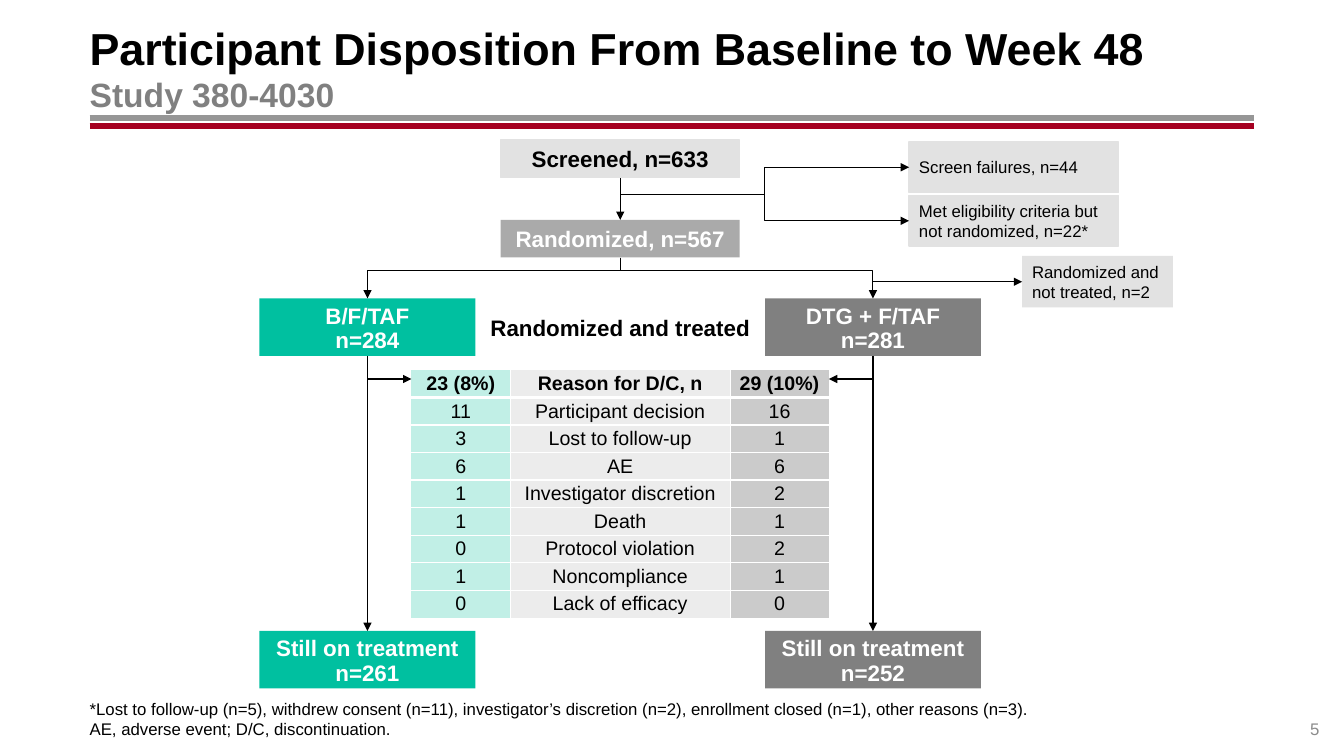
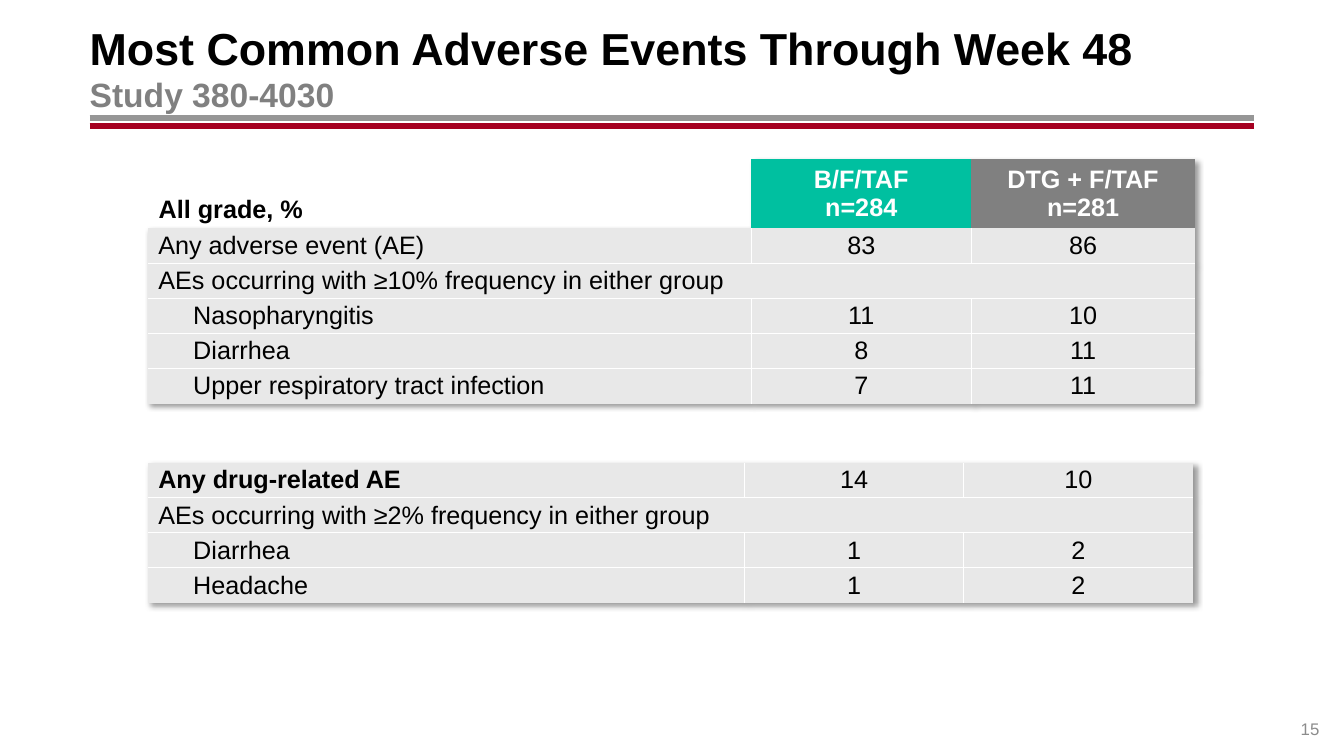
from dataclasses import dataclass

from lxml import etree
from pptx import Presentation
from pptx.dml.color import RGBColor
from pptx.enum.shapes import MSO_CONNECTOR, MSO_SHAPE
from pptx.enum.text import MSO_ANCHOR, PP_ALIGN
from pptx.oxml.ns import qn
from pptx.util import Cm, Pt

LEFT, CENTER, RIGHT = PP_ALIGN.LEFT, PP_ALIGN.CENTER, PP_ALIGN.RIGHT
TOP, MIDDLE, BOTTOM = MSO_ANCHOR.TOP, MSO_ANCHOR.MIDDLE, MSO_ANCHOR.BOTTOM
STRAIGHT, ELBOW = MSO_CONNECTOR.STRAIGHT, MSO_CONNECTOR.ELBOW
RECTANGLE = MSO_SHAPE.RECTANGLE
SIDE_TOP, SIDE_LEFT, SIDE_BOTTOM = 0, 1, 2
PLAIN_TABLE = "{2D5ABB26-0587-4C30-8999-92F81FD0307C}"


@dataclass(frozen=True)
class TextStyle:
    size: float
    color: str = "000000"
    bold: bool = False


@dataclass(frozen=True)
class Theme:
    font: str = "Arial"
    black: str = "000000"
    white: str = "FFFFFF"
    rule_grey: str = "969696"
    rule_red: str = "A50021"
    teal: str = "00C0A0"
    teal_tint: str = "C1EFE6"
    grey: str = "808080"
    grey_tint: str = "CBCBCB"
    mid_grey: str = "AAAAAA"
    light_grey: str = "E2E2E2"
    reason_grey: str = "ECECEC"
    row_grey: str = "E8E8E8"
    title: TextStyle = TextStyle(32, bold=True)
    subtitle: TextStyle = TextStyle(24, "808080", True)
    page_number: TextStyle = TextStyle(12, "8C8C8C")
    note: TextStyle = TextStyle(12)
    flow: TextStyle = TextStyle(16, bold=True)
    flow_white: TextStyle = TextStyle(16, "FFFFFF", True)
    reason: TextStyle = TextStyle(14)
    reason_head: TextStyle = TextStyle(14, bold=True)
    event: TextStyle = TextStyle(18)
    event_bold: TextStyle = TextStyle(18, bold=True)
    event_head: TextStyle = TextStyle(18, "FFFFFF", True)


THEME = Theme()
MARGIN, CONTENT_WIDTH = 2.26, 29.34
STUDY = "Study 380-4030"
ARMS = (
    ("B/F/TAF", "n=284", THEME.teal),
    ("DTG + F/TAF", "n=281", THEME.grey),
)


def apply(target, values):
    for name, value in values.items():
        setattr(target, name, value)


def rgb(color):
    return RGBColor.from_string(color)


def insets(left, top, right, bottom):
    return {"margin_left": Cm(left), "margin_top": Cm(top),
            "margin_right": Cm(right), "margin_bottom": Cm(bottom)}


NO_INSETS = insets(0, 0, 0, 0)


def write(frame, lines, align=LEFT, spacing=None):
    """Fill a text frame with one paragraph for each (text, style) pair."""
    for index, (text, style) in enumerate(lines):
        para = frame.paragraphs[0] if index == 0 else frame.add_paragraph()
        apply(para, {"alignment": align, "line_spacing": spacing})
        span = para.add_run()
        span.text = text
        apply(span.font, {"name": THEME.font, "size": Pt(style.size), "bold": style.bold})
        span.font.color.rgb = rgb(style.color)


def add_text(page, place, lines, align=LEFT, anchor=MIDDLE, margins=NO_INSETS):
    frame = page.shapes.add_textbox(*map(Cm, place)).text_frame
    apply(frame, {"word_wrap": True, "vertical_anchor": anchor, **margins})
    write(frame, lines, align)


def add_box(page, place, fill, lines, align=CENTER, outlined=False,
            spacing=None, margins=insets(0.25, 0.13, 0.25, 0.13)):
    box = page.shapes.add_shape(RECTANGLE, *map(Cm, place))
    box.shadow.inherit = False
    box.fill.solid()
    box.fill.fore_color.rgb = rgb(fill)
    if outlined:
        box.line.color.rgb = rgb(fill)
        box.line.width = Pt(1)
    else:
        box.line.fill.background()
    apply(box.text_frame, {"word_wrap": True, "vertical_anchor": MIDDLE, **margins})
    write(box.text_frame, lines, align, spacing)
    return box


def add_line(page, start, end, kind=STRAIGHT, color=THEME.black, width=0.75, arrow=True):
    line = page.shapes.add_connector(kind, *map(Cm, (*start, *end)))
    line.line.color.rgb = rgb(color)
    line.line.width = Pt(width)
    properties = line.element.spPr
    if arrow:
        etree.SubElement(properties.find(qn("a:ln")), qn("a:tailEnd"), type="triangle")
    etree.SubElement(properties, qn("a:effectLst"))
    return line


def join_down(page, upper, lower):
    """Draw an arrow from the bottom of one box to the top of another."""
    line = add_line(page, (0, 0), (0, 0))
    line.begin_connect(upper, SIDE_BOTTOM)
    line.end_connect(lower, SIDE_TOP)


def add_drop_elbow(page, start, end, bend):
    """Draw an elbow arrow that leaves downwards and turns at the bend fraction."""
    (x1, y1), (x2, y2) = start, end
    drop, reach = y2 - y1, abs(x2 - x1)
    left, top = (x1 + x2 - drop) / 2, (y1 + y2 - reach) / 2
    line = add_line(page, (left, top), (left + drop, top + reach), ELBOW)
    properties = line.element.spPr
    turn = {"rot": "5400000"} if x2 < x1 else {"rot": "16200000", "flipH": "1"}
    for name, value in turn.items():
        properties.find(qn("a:xfrm")).set(name, value)
    geometry = properties.find(qn("a:prstGeom"))
    guides = geometry.find(qn("a:avLst"))
    if guides is None:
        guides = etree.SubElement(geometry, qn("a:avLst"))
    etree.SubElement(guides, qn("a:gd"), name="adj1", fmla=f"val {round(bend * 100000)}")


def add_grid(page, left, top, columns, rows):
    """Add an unstyled table with the given column widths and row heights."""
    place = map(Cm, (left, top, sum(columns), sum(rows)))
    table = page.shapes.add_table(len(rows), len(columns), *place).table
    apply(table, {"first_row": False, "horz_banding": False})
    table._tbl.tblPr.find(qn("a:tableStyleId")).text = PLAIN_TABLE
    for column, width in zip(table.columns, columns):
        column.width = Cm(width)
    for row, height in zip(table.rows, rows):
        row.height = Cm(height)
    return table


def fill_cell(cell, lines, fill, borders, margins, align=CENTER, anchor=MIDDLE):
    """Set a cell; borders maps sides, in the order L, R, T, B, to point widths."""
    properties = cell._tc.get_or_add_tcPr()
    for side, width in borders.items():
        edge = etree.SubElement(properties, qn(f"a:ln{side}"), w=str(Pt(width)))
        paint = etree.SubElement(edge, qn("a:solidFill"))
        etree.SubElement(paint, qn("a:srgbClr"), val=THEME.white)
    if fill:
        cell.fill.solid()
        cell.fill.fore_color.rgb = rgb(fill)
    else:
        cell.fill.background()
    apply(cell, {"vertical_anchor": anchor, **margins})
    write(cell.text_frame, lines, align)


def inner_borders(column, last_column, above, below, width):
    """Give the sides that touch a neighbour; above and below are 0 at an edge."""
    sides = {"L": width * (column > 0), "R": width * (column < last_column),
             "T": above, "B": below}
    return {side: size for side, size in sides.items() if size}


def add_table_shadow(table):
    effects = etree.Element(qn("a:effectLst"))
    shadow = etree.SubElement(effects, qn("a:outerShdw"), blurRad="50800", dist="38100",
                              dir="2700000", algn="tl", rotWithShape="0")
    color = etree.SubElement(shadow, qn("a:srgbClr"), val=THEME.black)
    etree.SubElement(color, qn("a:alpha"), val="40000")
    table._tbl.tblPr.insert(0, effects)


def add_page(deck, title, number):
    page = deck.slides.add_slide(deck.slide_layouts[6])
    for y, color in ((2.97, THEME.rule_grey), (3.18, THEME.rule_red)):
        add_line(page, (MARGIN, y), (MARGIN + CONTENT_WIDTH, y),
                 color=color, width=4.25, arrow=False)
    add_text(page, (MARGIN, 0.46, CONTENT_WIDTH, 2.3),
             [(title, THEME.title), (STUDY, THEME.subtitle)],
             anchor=TOP, margins=insets(0, 0.05, 0.25, 0))
    add_text(page, (31.6, 17.6, 1.65, 1.02), [(number, THEME.page_number)], RIGHT, BOTTOM)
    return page


def add_reason_table(page, left, top):
    reasons = (
        ("23 (8%)", "Reason for D/C, n", "29 (10%)"),
        ("11", "Participant decision", "16"),
        ("3", "Lost to follow-up", "1"),
        ("6", "AE", "6"),
        ("1", "Investigator discretion", "2"),
        ("1", "Death", "1"),
        ("0", "Protocol violation", "2"),
        ("1", "Noncompliance", "1"),
        ("0", "Lack of efficacy", "0"),
    )
    fills = (THEME.teal_tint, THEME.reason_grey, THEME.grey_tint)
    edges = [0, 3] + [1] * (len(reasons) - 2) + [0]
    table = add_grid(page, left, top, (2.49, 5.54, 2.49), [6.25 / len(reasons)] * len(reasons))
    for r, row in enumerate(reasons):
        style = THEME.reason if r else THEME.reason_head
        for c, (text, fill) in enumerate(zip(row, fills)):
            borders = inner_borders(c, 2, edges[r], edges[r + 1], 1)
            fill_cell(table.cell(r, c), [(text, style)], fill, borders,
                      insets(0, 0.05, 0, 0.05))


def add_disposition(deck):
    page = add_page(deck, "Participant Disposition From Baseline to Week 48", "5")
    center, reach = 15.63, 6.37
    arm_width, arm_height, arm_top = 5.44, 1.45, 7.52
    flow_width, flow_height, random_top = 6.02, 0.95, 5.54

    flow_left = center - flow_width / 2
    screened = add_box(page, (flow_left, 3.53, flow_width, flow_height), THEME.light_grey,
                       [("Screened, n=633", THEME.flow)], outlined=True)
    randomized = add_box(page, (flow_left, random_top, flow_width, flow_height),
                         THEME.mid_grey, [("Randomized, n=567", THEME.flow_white)])
    join_down(page, screened, randomized)

    side_left, side_top, side_height, side_step = 22.91, 3.58, 1.27, 1.35
    branch_y = side_top + (side_height + side_step) / 2
    excluded = ("Screen failures, n=44", "Met eligibility criteria but not randomized, n=22*")
    for index, text in enumerate(excluded):
        y = side_top + index * side_step
        add_box(page, (side_left, y, 5.28, side_height), THEME.light_grey,
                [(text, THEME.note)], LEFT, outlined=True)
        add_line(page, (center, branch_y), (side_left, y + side_height / 2), ELBOW)

    untreated = add_box(page, (25.76, 6.45, 3.8, 1.3), THEME.light_grey,
                        [("Randomized and not treated, n=2", THEME.note)], LEFT)
    add_line(page, (center + reach, 7.1), (25.76, 7.1)).end_connect(untreated, SIDE_LEFT)

    table_left, table_right, exit_y = 10.37, 20.89, 9.55
    add_reason_table(page, table_left, 9.32)
    paths = ((center - reach, table_left, "n=261"), (center + reach, table_right, "n=252"))
    for (name, size, fill), (x, table_edge, remaining) in zip(ARMS, paths):
        start, finish = (
            add_box(page, (x - arm_width / 2, y, arm_width, arm_height), fill,
                    [(text, THEME.flow_white) for text in lines],
                    spacing=0.9, margins=insets(0.25, 0.1, 0.25, 0))
            for y, lines in ((arm_top, (name, size)),
                             (15.9, ("Still on treatment", remaining))))
        add_drop_elbow(page, (center, random_top + flow_height), (x, arm_top), 0.32)
        join_down(page, start, finish)
        add_line(page, (x, exit_y), (table_edge, exit_y))

    add_text(page, (center - 3.62, 7.7, 7.24, 1.09),
             [("Randomized and treated", THEME.flow)], CENTER)
    notes = (
        "*Lost to follow-up (n=5), withdrew consent (n=11), investigator’s discretion (n=2), "
        "enrollment closed (n=1), other reasons (n=3).",
        "AE, adverse event; D/C, discontinuation.",
    )
    add_text(page, (MARGIN, 17.35, CONTENT_WIDTH, 1.27),
             [(text, THEME.note) for text in notes], anchor=BOTTOM)


def add_event_table(page, top, columns, rows, header=None, bold_first=False):
    """Add a shadowed table; a row of one text spans it, and rows after that are indented."""
    row_height, header_height, offset = 0.86, 1.69, int(header is not None)
    heights = [header_height] * offset + [row_height] * len(rows)
    table = add_grid(page, 3.73, top, columns, heights)
    if header:
        margins = insets(0.27, 0.11, 0.27, 0.11)
        fill_cell(table.cell(0, 0), [(header, THEME.event_bold)], None, {}, margins,
                  LEFT, BOTTOM)
        for c, (name, size, fill) in enumerate(ARMS, 1):
            lines = [(text, THEME.event_head) for text in (name, size)]
            fill_cell(table.cell(0, c), lines, fill, {}, margins)
    indent = 0
    for r, row in enumerate(rows):
        spanning = len(row) == 1
        for c, text in enumerate(row):
            borders = inner_borders(c, len(row) - 1, int(r > 0), int(r < len(rows) - 1), 1)
            style = THEME.event_bold if bold_first and r == c == 0 else THEME.event
            left = 0.26 + (0 if c else indent)
            fill_cell(table.cell(r + offset, c), [(text, style)], THEME.row_grey, borders,
                      insets(left, 0.06, 0.26, 0.06), CENTER if c else LEFT)
        if spanning:
            table.cell(r + offset, 0).merge(table.cell(r + offset, len(columns) - 1))
            indent = 0.88
    add_table_shadow(table)


def add_adverse_events(deck):
    page = add_page(deck, "Most Common Adverse Events Through Week 48", "15")
    add_event_table(page, 4.01, (15.2, 5.55, 5.63), (
        ("Any adverse event (AE)", "83", "86"),
        ("AEs occurring with ≥10% frequency in either group",),
        ("Nasopharyngitis", "11", "10"),
        ("Diarrhea", "8", "11"),
        ("Upper respiratory tract infection", "7", "11"),
    ), header="All grade, %")
    add_event_table(page, 11.66, (15.04, 5.51, 5.79), (
        ("Any drug-related AE", "14", "10"),
        ("AEs occurring with ≥2% frequency in either group",),
        ("Diarrhea", "1", "2"),
        ("Headache", "1", "2"),
    ), bold_first=True)


def main():
    deck = Presentation()
    apply(deck, {"slide_width": Cm(33.87), "slide_height": Cm(19.05)})
    add_disposition(deck)
    add_adverse_events(deck)
    deck.save("out.pptx")


if __name__ == "__main__":
    main()
